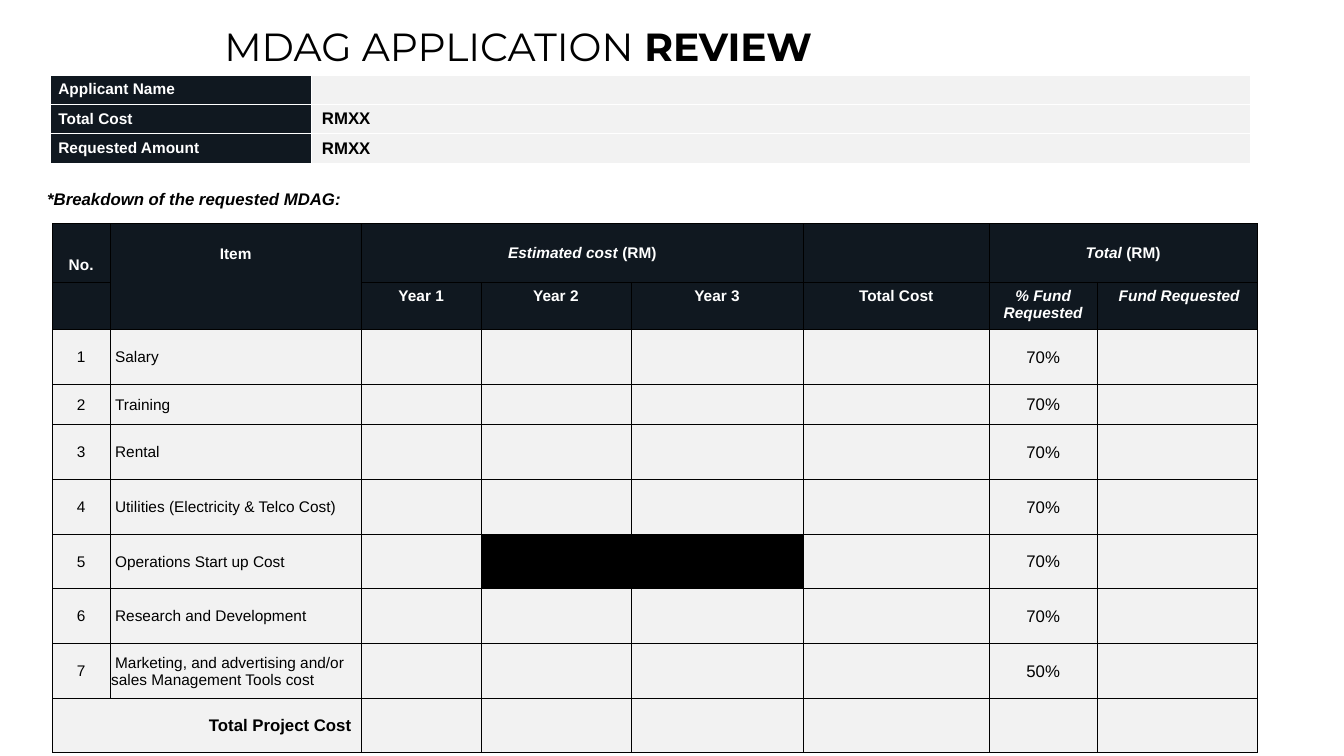
from lxml import etree
from pptx import Presentation
from pptx.dml.color import RGBColor
from pptx.enum.text import MSO_ANCHOR, MSO_AUTO_SIZE, PP_ALIGN
from pptx.oxml.ns import qn
from pptx.util import Cm, Pt

BLACK = RGBColor(0x00, 0x00, 0x00)
WHITE = RGBColor(0xFF, 0xFF, 0xFF)
NAVY = RGBColor(0x10, 0x18, 0x20)
GREY = RGBColor(0xF2, 0xF2, 0xF2)
LEFT, CENTER, RIGHT = PP_ALIGN.LEFT, PP_ALIGN.CENTER, PP_ALIGN.RIGHT
TOP, MIDDLE, BOTTOM = MSO_ANCHOR.TOP, MSO_ANCHOR.MIDDLE, MSO_ANCHOR.BOTTOM
NO_FIT = MSO_AUTO_SIZE.NONE
FIT_SHAPE = MSO_AUTO_SIZE.SHAPE_TO_FIT_TEXT
BODY_FONT = "Arial"
TITLE_FONT = "Montserrat"
BOLD = {"bold": True}
BOLD_ITALIC = {"bold": True, "italic": True}
TIGHT = {f"margin_{side}": Cm(0.03) for side in ("left", "top", "right")} | {"margin_bottom": Cm(0)}
LABEL = {"margin_left": Cm(0.19), "margin_top": Cm(0.1), "margin_bottom": Cm(0.1)}

SUMMARY = [("Applicant Name", ""), ("Total Cost", "RMXX"), ("Requested Amount", "RMXX")]
ITEMS = [
    ("Salary", "70%"),
    ("Training", "70%"),
    ("Rental", "70%"),
    ("Utilities (Electricity & Telco Cost)", "70%"),
    ("Operations Start up Cost", "70%"),
    ("Research and Development", "70%"),
    ("Marketing, and advertising and/or sales Management Tools cost", "50%"),
]
SUBHEADS = [("Year 1", BOLD), ("Year 2", BOLD), ("Year 3", BOLD), ("Total Cost", BOLD),
            ("% Fund Requested", BOLD_ITALIC), (" Fund Requested", BOLD_ITALIC)]


def apply(target, values):
    """Set each named attribute on the target."""
    for name, value in values.items():
        setattr(target, name, value)


class ReviewSlide:
    """Hold the style and the current slide."""

    def __init__(self, deck):
        """Add a title-only page to the deck."""
        self.page = deck.slides.add_slide(deck.slide_layouts[5])

    def add_spans(self, para, spans, size, color=BLACK, font=BODY_FONT, align=LEFT):
        """Fill a paragraph with formatted spans."""
        para.alignment = align
        for text, look in spans:
            span = para.add_run()
            span.text = text
            apply(span.font, {"name": font, "size": Pt(size), "bold": False, "italic": False} | look)
            span.font.color.rgb = color

    def title(self, spans, left, top, width, height):
        """Place and format the title placeholder."""
        box = self.page.shapes.title
        apply(box, {"left": Cm(left), "top": Cm(top), "width": Cm(width), "height": Cm(height)})
        apply(box.text_frame, {"auto_size": NO_FIT, "vertical_anchor": BOTTOM, "word_wrap": True})
        para = box.text_frame.paragraphs[0]
        para.line_spacing = 0.9
        self.add_spans(para, spans, 28, font=TITLE_FONT, align=CENTER)

    def note(self, text, left, top, width, height):
        """Add a one-line text box."""
        box = self.page.shapes.add_textbox(Cm(left), Cm(top), Cm(width), Cm(height))
        apply(box.text_frame, {"word_wrap": False, "auto_size": FIT_SHAPE})
        self.add_spans(box.text_frame.paragraphs[0], [(text, BOLD_ITALIC)], 12)

    def table(self, left, top, widths, heights, line_color, line_width):
        """Add a grey table with plain borders."""
        frame = self.page.shapes.add_table(len(heights), len(widths), Cm(left), Cm(top),
                                           Cm(sum(widths)), Cm(sum(heights)))
        table = frame.table
        apply(table, {"first_row": False, "horz_banding": False})
        for column, width in zip(table.columns, widths):
            column.width = Cm(width)
        for row, height in zip(table.rows, heights):
            row.height = Cm(height)
        for cell in table.iter_cells():
            self.border(cell, line_color, line_width)
            self.paint(cell, GREY)
            para = cell.text_frame.paragraphs[0]
            etree.SubElement(para._p, qn("a:endParaRPr"), sz="1100")
        return table

    def border(self, cell, color, width):
        """Draw the four borders of a cell."""
        properties = cell._tc.get_or_add_tcPr()
        for side in ("lnL", "lnR", "lnT", "lnB"):
            line = etree.SubElement(properties, qn(f"a:{side}"), w=str(Pt(width)))
            fill = etree.SubElement(line, qn("a:solidFill"))
            etree.SubElement(fill, qn("a:srgbClr"), val=str(color))

    def paint(self, cell, color):
        """Fill a cell with one colour."""
        cell.fill.solid()
        cell.fill.fore_color.rgb = color

    def fill_cell(self, cell, spans, size=11, color=BLACK, align=CENTER, anchor=MIDDLE,
                  indent=0, layout=None):
        """Put text in a cell and set its layout."""
        apply(cell, {"vertical_anchor": anchor} | (layout or {}))
        para = cell.text_frame.paragraphs[0]
        self.add_spans(para, spans, size, color, align=align)
        if indent:
            para._p.get_or_add_pPr().set("indent", str(Cm(indent)))


def add_summary(slide):
    """Build the applicant summary table."""
    table = slide.table(1.28, 1.89, [6.58, 23.65], [0.66, 0.74, 0.76], WHITE, 0.75)
    for row, (label, value) in enumerate(SUMMARY):
        slide.paint(table.cell(row, 0), NAVY)
        slide.fill_cell(table.cell(row, 0), [(label, BOLD)], color=WHITE, align=LEFT, layout=LABEL)
        if value:
            slide.fill_cell(table.cell(row, 1), [(value, BOLD)], 12, align=LEFT)


def add_breakdown(slide):
    """Build the cost breakdown table."""
    heights = [1.48, 1.18, 1.38, 1.02] + [1.38] * 6
    table = slide.table(1.32, 5.63, [1.45, 6.34, 3.01, 3.78, 4.34, 4.69, 2.72, 4.03], heights, BLACK, 0.6)
    for row in range(2):
        for column in range(len(table.columns)):
            slide.paint(table.cell(row, column), NAVY)
    last = len(heights) - 1
    for start, end in [((0, 1), (1, 1)), ((0, 2), (0, 4)), ((0, 6), (0, 7)), ((last, 0), (last, 1))]:
        table.cell(*start).merge(table.cell(*end))

    for column, text, margin in [(0, "No.", 0.84), (1, "Item", 0.56)]:
        slide.fill_cell(table.cell(0, column), [(text, BOLD)], color=WHITE, anchor=TOP,
                        layout={"margin_top": Cm(margin)})
    for column, text in [(2, "Estimated cost"), (6, "Total")]:
        slide.fill_cell(table.cell(0, column), [(text, BOLD_ITALIC), (" (RM)", BOLD)], color=WHITE)
    for column, subhead in enumerate(SUBHEADS, 2):
        slide.fill_cell(table.cell(1, column), [subhead], color=WHITE, anchor=TOP)

    for number, (item, share) in enumerate(ITEMS, 1):
        row = number + 1
        slide.fill_cell(table.cell(row, 0), [(str(number), {})], layout=TIGHT)
        slide.fill_cell(table.cell(row, 1), [(item, {})], align=LEFT, indent=0.1, layout=TIGHT)
        slide.fill_cell(table.cell(row, 6), [(share, {})], 12, layout=TIGHT)
    for column in (3, 4):
        slide.paint(table.cell(6, column), BLACK)
    slide.fill_cell(table.cell(last, 0), [("Total Project Cost", BOLD)], 12, align=RIGHT)


def main():
    """Build and save the deck."""
    deck = Presentation()
    apply(deck, {"slide_width": Cm(33.87), "slide_height": Cm(19.05)})
    slide = ReviewSlide(deck)
    slide.title([("MDAG APPLICATION", {}), (" REVIEW", BOLD)], -1.55, 0.38, 29.21, 1.5)
    add_summary(slide)
    slide.note("*Breakdown of the requested MDAG:", 0.94, 4.62, 8, 0.76)
    add_breakdown(slide)
    deck.save("out.pptx")


if __name__ == "__main__":
    main()
